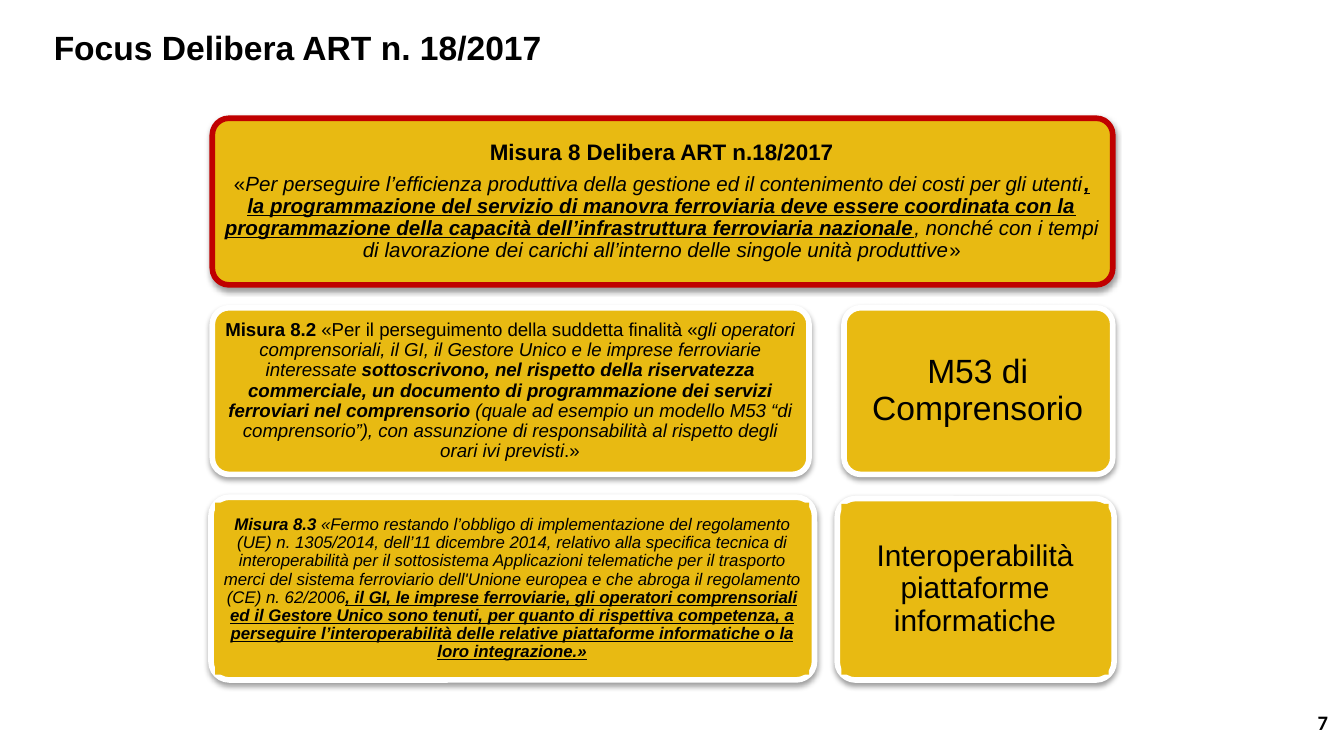
from pptx import Presentation
from pptx.dml.color import RGBColor
from pptx.enum.shapes import MSO_SHAPE as Preset
from pptx.enum.text import MSO_ANCHOR as Anchor, PP_ALIGN as Align
from pptx.oxml import parse_xml
from pptx.oxml.ns import nsdecls
from pptx.util import Inches, Pt

COLORS = {"gold": "E8BA12", "red": "C00000", "white": "FFFFFF", "black": "000000"}
BOLD, ITALIC, UNDERLINE = "b", "i", "u"
STRONG = BOLD + ITALIC
KEY = STRONG + UNDERLINE

MEASURE_8 = [
    (12, [("Misura 8 Delibera ART n.18/2017", BOLD)]),
    (11, [
        ("«", ""),
        ("Per perseguire l’efficienza produttiva della gestione ed il contenimento "
         "dei costi per gli utenti", ITALIC),
        (", la programmazione del servizio di manovra ferroviaria deve essere coordinata "
         "con la programmazione della capacità dell’infrastruttura ferroviaria nazionale", KEY),
        (", nonché con i tempi di lavorazione dei carichi all’interno delle singole "
         "unità produttive", ITALIC),
        ("»", ""),
    ]),
]
MEASURE_8_2 = [
    (10, [
        ("Misura 8.2 ", BOLD),
        ("«Per il perseguimento della suddetta finalità «", ""),
        ("gli operatori comprensoriali, il GI, il Gestore Unico e le imprese ferroviarie "
         "interessate ", ITALIC),
        ("sottoscrivono, nel rispetto della riservatezza commerciale, un documento di "
         "programmazione dei servizi ferroviari nel comprensorio", STRONG),
        (" (quale ad esempio un modello M53 “di comprensorio”), con assunzione di "
         "responsabilità al rispetto degli orari ivi previsti", ITALIC),
        (".»", ""),
    ]),
]
MEASURE_8_3 = [
    (9, [
        ("Misura 8.3 ", STRONG),
        ("«Fermo restando l’obbligo di implementazione del regolamento (UE) n. 1305/2014, "
         "dell’11 dicembre 2014, relativo alla specifica tecnica di interoperabilità per il "
         "sottosistema Applicazioni telematiche per il trasporto merci del sistema "
         "ferroviario dell'Unione europea e che abroga il regolamento (CE) n. 62/2006", ITALIC),
        (", il GI, le imprese ferroviarie, gli operatori comprensoriali ed il Gestore Unico "
         "sono tenuti, per quanto di rispettiva competenza, a perseguire l’interoperabilità "
         "delle relative piattaforme informatiche o la loro integrazione.»", KEY),
    ]),
]
M53 = [(18, [("M53 di Comprensorio", "")])]
PLATFORMS = [(16, [("Interoperabilità piattaforme informatiche", "")])]

CARDS = [
    ((1.58, 0.88, 6.7, 1.24), "red", 0.05, False, MEASURE_8),
    ((1.58, 2.29, 4.44, 1.24), "white", 0.04, False, MEASURE_8_2),
    ((6.28, 2.29, 2, 1.24), "white", 0.07, False, M53),
    ((1.57, 3.7, 4.49, 1.36), "white", 0.05, True, MEASURE_8_3),
    ((6.23, 3.71, 2.06, 1.35), "white", 0.09, True, PLATFORMS),
]


def color(name):
    return RGBColor.from_string(COLORS[name])


def set_frame(shape, margin_x, margin_y, anchor):
    frame = shape.text_frame
    frame.word_wrap = True
    frame.vertical_anchor = anchor
    frame.margin_left = frame.margin_right = Inches(margin_x)
    frame.margin_top = frame.margin_bottom = Inches(margin_y)
    return frame


def add_run(paragraph, text, size, style="", font="Arial"):
    run = paragraph.add_run()
    run.text = text
    run.font.name = font
    run.font.size = Pt(size)
    run.font.bold = BOLD in style
    run.font.italic = ITALIC in style
    run.font.underline = UNDERLINE in style
    run.font.color.rgb = color("black")


def add_shadow(shape):
    shape._element.spPr.append(parse_xml(
        f'<a:effectLst {nsdecls("a")}><a:outerShdw blurRad="{Pt(3.1)}" dist="{Pt(1.6)}" '
        f'dir="5400000" rotWithShape="0"><a:srgbClr val="{COLORS["black"]}">'
        '<a:alpha val="38000"/></a:srgbClr></a:outerShdw></a:effectLst>'))


def add_card(slide, box, border, margin, filled, paragraphs):
    left, top, width, height = box
    card = slide.shapes.add_shape(Preset.ROUNDED_RECTANGLE, *map(Inches, box))
    card.adjustments[0] = 0.1
    card.fill.solid()
    card.fill.fore_color.rgb = color("gold")
    card.line.color.rgb = color(border)
    card.line.width = Pt(3)
    add_shadow(card)

    inner = map(Inches, (left + 0.03, top + 0.04, width - 0.07, height - 0.08))
    if filled:
        panel = slide.shapes.add_shape(Preset.RECTANGLE, *inner)
        panel.shadow.inherit = False
        panel.fill.solid()
        panel.fill.fore_color.rgb = color("gold")
        panel.line.fill.background()
    else:
        panel = slide.shapes.add_textbox(*inner)
    frame = set_frame(panel, margin, margin, Anchor.MIDDLE)
    for index, (size, runs) in enumerate(paragraphs):
        paragraph = frame.add_paragraph() if index else frame.paragraphs[0]
        paragraph.alignment = Align.CENTER
        paragraph.line_spacing = 0.9
        paragraph.space_after = Pt(size * 0.35)
        for text, style in runs:
            add_run(paragraph, text, size, style)


def add_title(slide, box):
    title = slide.shapes.add_textbox(*map(Inches, box))
    paragraph = set_frame(title, 0.07, 0.04, Anchor.MIDDLE).paragraphs[0]
    paragraph.line_spacing = 0.9
    add_run(paragraph, "Focus Delibera ART n. 18/2017", 18, BOLD)


def add_page_number(slide, box):
    number = slide.shapes.add_textbox(*map(Inches, box))
    paragraph = set_frame(number, 0.1, 0.05, Anchor.TOP).paragraphs[0]
    paragraph.alignment = Align.RIGHT
    add_run(paragraph, "7", 11, BOLD, "Calibri")


def main():
    presentation = Presentation()
    presentation.slide_width = Inches(10)
    presentation.slide_height = Inches(10) * 9 // 16
    slide = presentation.slides.add_slide(presentation.slide_layouts[6])
    add_page_number(slide, (8.85, 5.23, 1.13, 0.29))
    for card in CARDS:
        add_card(slide, *card)
    add_title(slide, (0.33, 0.14, 9.31, 0.46))
    presentation.save("out.pptx")


if __name__ == "__main__":
    main()
